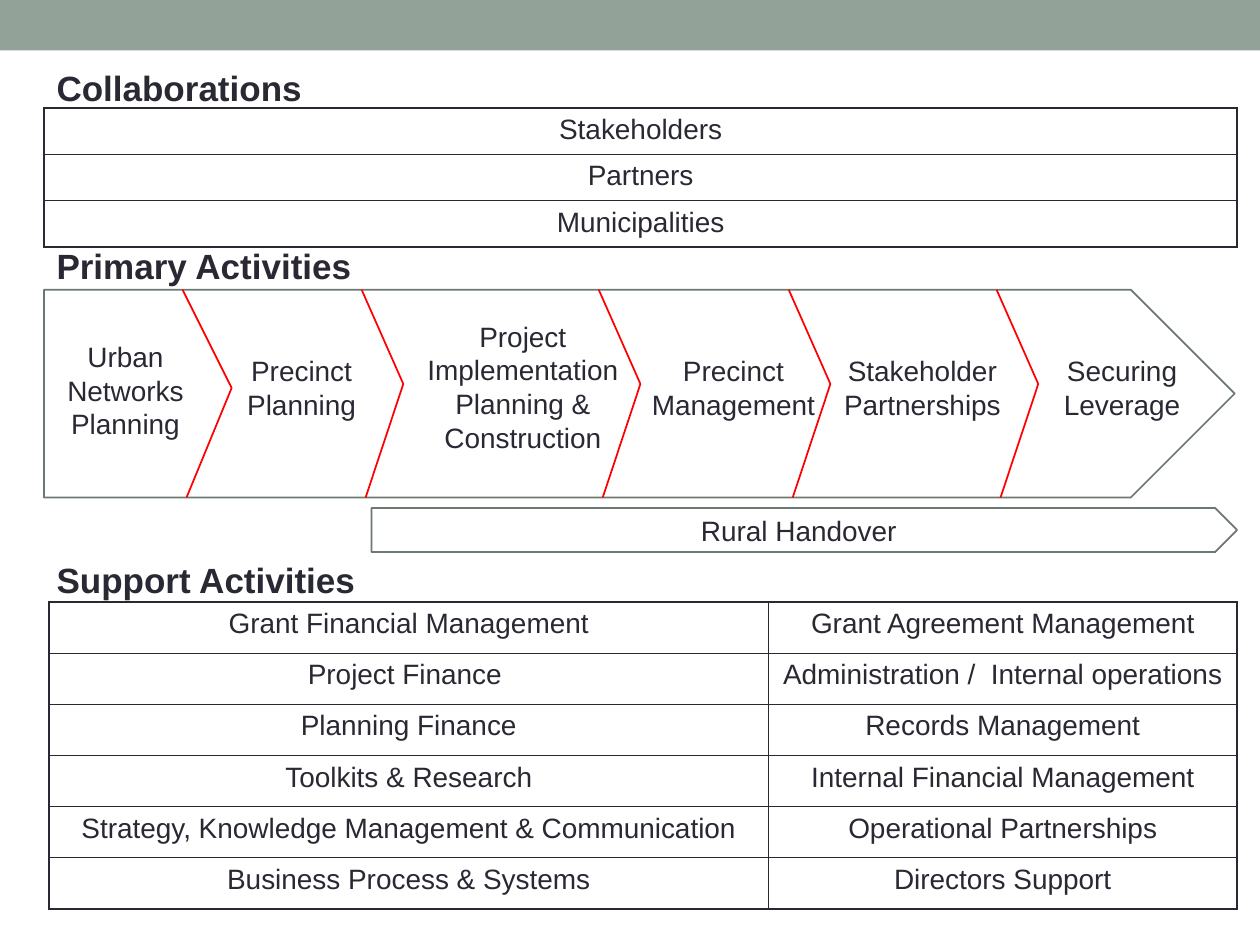
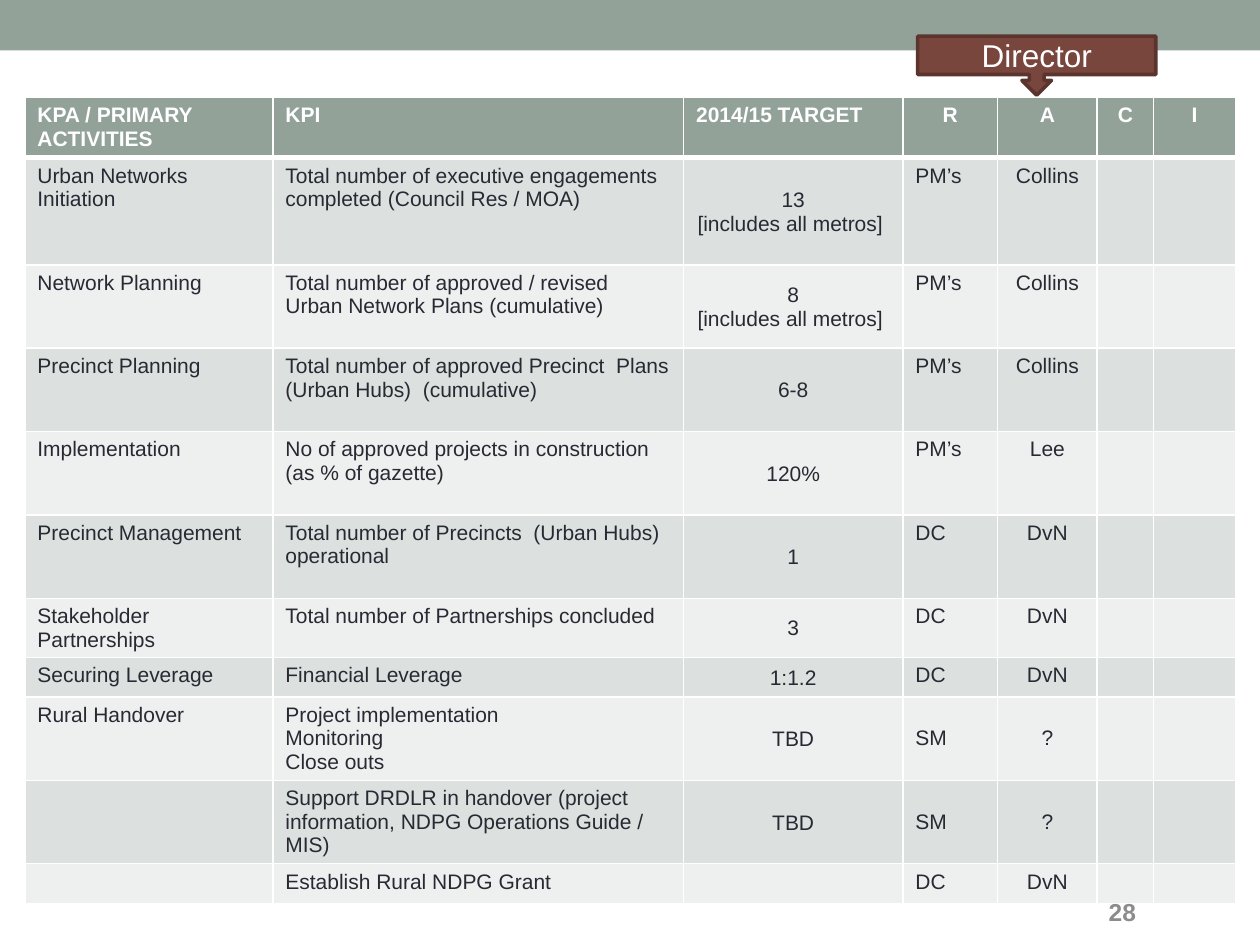
from lxml.etree import SubElement
from pptx import Presentation
from pptx.dml.color import RGBColor
from pptx.enum.shapes import MSO_CONNECTOR as Connector, MSO_SHAPE as Shape
from pptx.enum.text import MSO_ANCHOR as Anchor, PP_ALIGN as Align
from pptx.oxml.ns import qn
from pptx.util import Cm, Pt

# Shared colours and text formats
SAGE = RGBColor(0x93, 0xA2, 0x99)
SAGE_DARK = RGBColor(0x6D, 0x78, 0x71)
STRIPES = (RGBColor(0xDC, 0xE0, 0xDE), RGBColor(0xEE, 0xF0, 0xEF))
INK = RGBColor(0x29, 0x29, 0x34)
WHITE = RGBColor(0xFF, 0xFF, 0xFF)
RED = RGBColor(0xFF, 0x00, 0x00)
GREY = RGBColor(0x8C, 0x8C, 0x8C)
BROWN = RGBColor(0x79, 0x46, 0x3D)
BROWN_DARK = RGBColor(0x5A, 0x34, 0x2D)

HEADING = {"size": Pt(20), "bold": True, "color": INK}
BODY = {"size": Pt(16), "bold": False, "color": INK}
CALLOUT = {"size": Pt(18), "bold": False, "color": WHITE}
NUMBER = {"size": Pt(14), "bold": True, "color": GREY}
TABLE_HEAD = {"size": Pt(12), "bold": True, "color": WHITE}
TABLE_BODY = {"size": Pt(12), "bold": False, "color": INK}

# Value chain content, lengths in centimetres
HEADINGS = [("Collaborations", 1.22), ("Primary Activities", 4.8), ("Support Activities", 11.13)]
COLLABORATIONS = [["Stakeholders"], ["Partners"], ["Municipalities"]]
ACTIVITIES = [  # text, left, width, lines, vertical centre
    ("Urban Networks Planning", 0.89, 3.28, 3, 7.88),
    ("Precinct Planning", 4.67, 2.82, 2, 7.82),
    ("Project Implementation Planning & Construction", 8.18, 4.72, 4, 7.82),
    ("Precinct Management", 12.7, 4.17, 2, 7.82),
    ("Stakeholder Partnerships", 16.69, 3.81, 2, 7.82),
    ("Securing Leverage", 20.93, 3.38, 2, 7.82),
]
DIVIDERS = [  # left, tip offset across, tip offset down
    (3.68, 0.99, 1.98),
    (7.29, 0.84, 1.9),
    (12.07, 0.84, 1.9),
    (15.9, 0.84, 1.9),
    (20.09, 0.84, 1.9),
]
CHAIN_TOP, CHAIN_HEIGHT = 5.84, 4.19
SUPPORT = [
    ["Grant Financial Management", "Grant Agreement Management"],
    ["Project Finance ", "Administration /  Internal operations"],
    ["Planning Finance", "Records Management"],
    ["Toolkits & Research", "Internal Financial Management"],
    ["Strategy, Knowledge Management & Communication", "Operational Partnerships"],
    ["Business Process & Systems", "Directors Support"],
]

# KPI content
KPI_COLUMNS = [5.0, 8.28, 4.42, 1.91, 2.01, 1.14, 1.65]
KPI_HEIGHTS = [1.22, 2.16, 1.68, 1.68, 1.68, 1.68, 1.19, 0.8, 1.68, 1.68, 0.8]
KPI_HEADER = ["KPA / PRIMARY ACTIVITIES", "KPI", "2014/15 TARGET", "R", "A", "C", "I"]
KPI_ROWS = [
    ["Urban Networks Initiation",
     "Total number of executive engagements completed (Council Res / MOA)",
     "13\n[includes all metros] ", "PM’s", "Collins"],
    ["Network Planning", "Total number of approved / revised Urban Network Plans (cumulative)",
     "8\n[includes all metros] ", "PM’s", "Collins"],
    ["Precinct Planning", "Total number of approved Precinct  Plans (Urban Hubs)  (cumulative)",
     "6-8", "PM’s", "Collins"],
    ["Implementation", "No of approved projects in construction (as % of gazette)",
     "120%", "PM’s", "Lee"],
    ["Precinct Management", "Total number of Precincts  (Urban Hubs) operational",
     "1", "DC", "DvN"],
    ["Stakeholder Partnerships", "Total number of Partnerships concluded", "3", "DC", "DvN"],
    ["Securing Leverage", "Financial Leverage", "1:1.2", "DC", "DvN"],
    ["Rural Handover", "Project implementation\nMonitoring\nClose outs", "TBD", "SM", "?"],
    ["", "Support DRDLR in handover (project information, NDPG Operations Guide / MIS)",
     "TBD", "SM", "?"],
    ["", "Establish Rural NDPG Grant", "", "DC", "DvN"],
]
TARGET, RESPONSIBLE, ACCOUNTABLE = 2, 3, 4


def write(frame, text, style, align=Align.LEFT):
    for index, line in enumerate(text.split("\n")):
        para = frame.paragraphs[0] if index == 0 else frame.add_paragraph()
        para.alignment = align
        if not line:  # keeps an empty cell from growing its row
            SubElement(para._p, qn("a:endParaRPr"), sz=str(int(style["size"].pt * 100)))
            continue
        span = para.add_run()
        span.text = line
        for name, value in {"name": "Arial", **style}.items():
            if name == "color":
                span.font.color.rgb = value
            else:
                setattr(span.font, name, value)


def add_text(page, place, text, style, align=Align.LEFT, wrap=True, anchor=Anchor.TOP):
    frame = page.shapes.add_textbox(*map(Cm, place)).text_frame
    frame.word_wrap, frame.vertical_anchor = wrap, anchor
    write(frame, text, style, align)


def add_box(page, kind, place, fill=None, line=None, width=1):
    box = page.shapes.add_shape(kind, *map(Cm, place))
    box.shadow.inherit = False
    for part, color in ((box.fill, fill), (box.line.fill, line)):
        if color is None:
            part.background()
        else:
            part.solid()
            part.fore_color.rgb = color
    if line is not None:
        box.line.width = Pt(width)
    return box


def add_divider(page, left, across, down):
    group = page.shapes.add_group_shape()
    points = [(left, CHAIN_TOP), (left + across, CHAIN_TOP + down),
              (left + 0.08, CHAIN_TOP + CHAIN_HEIGHT)]
    for start, end in zip(points, points[1:]):
        stroke = group.shapes.add_connector(Connector.STRAIGHT, *map(Cm, start + end))
        stroke.line.color.rgb, stroke.line.width = RED, Pt(1)
        SubElement(stroke._element.spPr, qn("a:effectLst"))


def add_grid(page, left, top, columns, heights):
    table = page.shapes.add_table(len(heights), len(columns), Cm(left), Cm(top),
                                  Cm(sum(columns)), Cm(sum(heights))).table
    table.first_row = table.horz_banding = False
    for column, width in zip(table.columns, columns):
        column.width = Cm(width)
    for row, height in zip(table.rows, heights):
        row.height = Cm(height)
    return table


def style_cell(cell, border, fill=None, top=1, bottom=1):
    properties = cell._tc.get_or_add_tcPr()
    for side, width in {"L": 1, "R": 1, "T": top, "B": bottom}.items():
        edge = SubElement(properties, qn(f"a:ln{side}"), w=str(Pt(width)))
        solid = SubElement(edge, qn("a:solidFill"))
        SubElement(solid, qn("a:srgbClr"), val=str(border))
    if fill is None:
        cell.fill.background()
    else:
        cell.fill.solid()
        cell.fill.fore_color.rgb = fill


def add_list_table(page, left, top, columns, height, rows, fill=None):
    table = add_grid(page, left, top, columns, [height] * len(rows))
    for row, texts in enumerate(rows):
        for column, text in enumerate(texts):
            cell = table.cell(row, column)
            style_cell(cell, INK, fill)
            write(cell.text_frame, text, BODY, Align.CENTER)


def add_page(deck):
    page = deck.slides.add_slide(deck.slide_layouts[6])
    add_box(page, Shape.RECTANGLE, (0, 0, 25.4, 1.02), SAGE)
    return page


def build_value_chain(deck):
    page = add_page(deck)
    for text, top in HEADINGS:
        add_text(page, (0.89, top, 6.8, 1.12), text, HEADING, wrap=False)

    # Primary activities arrow
    add_box(page, Shape.PENTAGON, (0.89, CHAIN_TOP, 24, CHAIN_HEIGHT), line=SAGE_DARK)
    for text, left, width, lines, centre in ACTIVITIES:
        height = 0.25 + 0.69 * lines
        add_text(page, (left, centre - height / 2, width, height), text, BODY, Align.CENTER)
    for divider in DIVIDERS:
        add_divider(page, *divider)
    handover = add_box(page, Shape.PENTAGON, (7.49, 10.24, 17.45, 0.89), line=SAGE_DARK)
    write(handover.text_frame, "Rural Handover", BODY, Align.CENTER)

    # Support and collaboration tables
    add_list_table(page, 0.99, 12.14, [14.5, 9.45], 1.03, SUPPORT, WHITE)
    add_list_table(page, 0.89, 2.18, [24.05], 0.93, COLLABORATIONS)


def build_kpi_page(deck):
    page = add_page(deck)

    # KPI table with a thick rule under its header
    table = add_grid(page, 0.5, 1.96, KPI_COLUMNS, KPI_HEIGHTS)
    for row, texts in enumerate([KPI_HEADER] + KPI_ROWS):
        header = row == 0
        for column in range(len(KPI_COLUMNS)):
            cell = table.cell(row, column)
            style_cell(cell, WHITE, SAGE if header else STRIPES[(row - 1) % 2],
                       top=3 if row == 1 else 1, bottom=3 if header else 1)
            text = texts[column] if column < len(texts) else ""
            centred = column >= RESPONSIBLE if header else column in (TARGET, ACCOUNTABLE)
            write(cell.text_frame, text, TABLE_HEAD if header else TABLE_BODY,
                  Align.CENTER if centred else Align.LEFT)
            if column == TARGET and not header:
                cell.margin_left = cell.margin_right = cell.margin_top = Cm(0.03)
                cell.margin_bottom = 0
                cell.vertical_anchor = Anchor.MIDDLE
            elif "SM" in texts and column in (RESPONSIBLE, ACCOUNTABLE):
                cell.vertical_anchor = Anchor.MIDDLE
            else:  # full rows keep their set height
                cell.margin_bottom = 0

    # Page number and the callout above the accountable column
    add_text(page, (22.1, 17.93, 2.97, 0.91), "28", NUMBER, anchor=Anchor.MIDDLE)
    director = add_box(page, Shape.DOWN_ARROW_CALLOUT, (18.5, 0.73, 4.8, 1.19),
                       BROWN, BROWN_DARK, 2.08)
    write(director.text_frame, "Director", CALLOUT, Align.CENTER)


def main():
    deck = Presentation()
    deck.slide_width, deck.slide_height = Cm(25.4), Cm(19.05)
    build_value_chain(deck)
    build_kpi_page(deck)
    deck.save("out.pptx")


if __name__ == "__main__":
    main()
